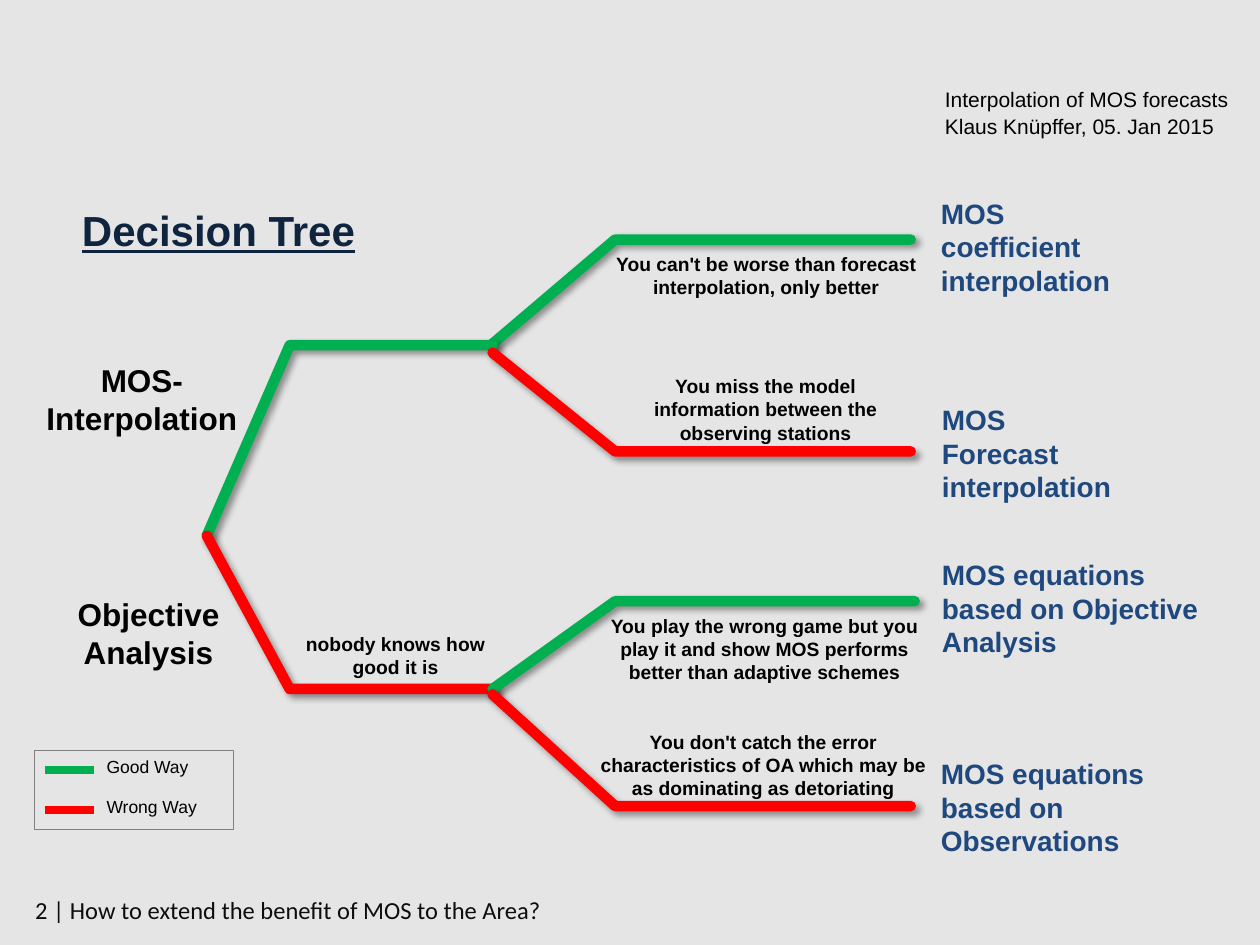
import pptx
import pptx.dml.color
import pptx.enum.shapes
import pptx.enum.text
import pptx.oxml
import pptx.oxml.ns
import pptx.util

Cm, Pt = pptx.util.Cm, pptx.util.Pt
RGBColor = pptx.dml.color.RGBColor
ALIGN = pptx.enum.text.PP_ALIGN
ANCHOR = pptx.enum.text.MSO_ANCHOR

BACKGROUND = RGBColor(0xE5, 0xE5, 0xE5)
BLACK = RGBColor(0, 0, 0)
NAVY = RGBColor(0x0F, 0x24, 0x3E)
BLUE = RGBColor(0x1F, 0x48, 0x7E)
FOOTER_GREY = RGBColor(0x0D, 0x0D, 0x0D)
FRAME_GREY = RGBColor(0x80, 0x80, 0x80)
GOOD = RGBColor(0x00, 0xB0, 0x50)
WRONG = RGBColor(0xFF, 0, 0)

SHADOW = (
    f'<a:outerShdw {pptx.oxml.ns.nsdecls("a")} blurRad="{Pt(4)}" dist="{Pt(3)}" '
    'dir="2700000" algn="tl" rotWithShape="0">'
    '<a:srgbClr val="000000"><a:alpha val="40000"/></a:srgbClr></a:outerShdw>'
)


def write(s, text, color, align=ALIGN.LEFT, **font):
    p = s.text_frame.paragraphs[0]
    p.text = text
    p.alignment = align
    for name, value in {"name": "Arial", **font}.items():
        setattr(p.font, name, value)
    p.font.color.rgb = color
    return p


def add_text(box, text, color, align=ALIGN.LEFT, left_inset=None, **font):
    """Add a text box; a given left inset zeroes the others and centres the text vertically."""
    s = slide.shapes.add_textbox(*map(Cm, box))
    tf = s.text_frame
    tf.word_wrap = True
    if left_inset is not None:
        tf.margin_left = Cm(left_inset)
        tf.margin_right = tf.margin_top = tf.margin_bottom = 0
        tf.vertical_anchor = ANCHOR.MIDDLE
    return write(s, text, color, align, **font)


prs = pptx.Presentation()
prs.slide_width, prs.slide_height = Cm(25.4), Cm(19.05)
slide = prs.slides.add_slide(prs.slide_layouts[5])
slide.background.fill.solid()
slide.background.fill.fore_color.rgb = BACKGROUND

title = slide.shapes.title
title.left, title.top, title.width, title.height = Cm(0.71), Cm(3.94), Cm(7.39), Cm(1.4)
title.text_frame.vertical_anchor = ANCHOR.MIDDLE
write(title, "Decision Tree", NAVY, ALIGN.CENTER, size=Pt(24), bold=True, underline=True)

p = add_text((18.8, 1.57, 6.5, 1.57),
             "Interpolation of MOS forecasts\nKlaus Knüpffer, 05. Jan 2015",
             BLACK, size=Pt(12))
p.line_spacing = 1.08

# Each branch runs from its start over a knee to a level end
ROOT, KNEE_1, FORK, KNEE_2, LEAF = 4.17, 5.84, 9.93, 12.4, 18.36
branches = [
    (GOOD, (FORK, 6.93), (KNEE_2, 4.83), LEAF),
    (GOOD, (ROOT, 10.8), (KNEE_1, 6.96), FORK),
    (WRONG, (FORK, 7.11), (KNEE_2, 9.1), LEAF),
    (WRONG, (ROOT, 10.8), (KNEE_1, 13.89), FORK),
    (GOOD, (FORK, 13.89), (KNEE_2, 12.12), LEAF + 0.08),
    (WRONG, (FORK, 14), (KNEE_2, 16.25), LEAF),
]
for color, start, knee, end_x in branches:
    builder = slide.shapes.build_freeform(Cm(start[0]), Cm(start[1]))
    builder.add_line_segments(
        [(Cm(x), Cm(y)) for x, y in (knee, (end_x, knee[1]))], close=False)
    s = builder.convert_to_shape()
    s.fill.background()
    s.line.color.rgb = color
    s.line.width = Pt(6)
    ln = s.line._get_or_add_ln()
    ln.set("cap", "rnd")
    ln.append(pptx.oxml.parse_xml(f'<a:round {pptx.oxml.ns.nsdecls("a")}/>'))
    s.shadow.inherit = False
    effects = s._element.spPr.find(pptx.oxml.ns.qn("a:effectLst"))
    effects.append(pptx.oxml.parse_xml(SHADOW))

choices = [
    ((0.89, 7.32, 3.94, 1.45), "MOS-Interpolation"),
    ((1.52, 12.04, 2.95, 1.45), "Objective Analysis"),
]
reasons = [
    ((12.4, 5.08, 6.1, 0.94), "You can't be worse than forecast interpolation, only better"),
    ((12.55, 7.54, 5.77, 1.42), "You miss the model information between the observing stations"),
    ((6.12, 12.75, 3.71, 0.94), "nobody knows how good it is"),
    ((12.29, 12.37, 6.25, 1.42),
     "You play the wrong game but you play it and show MOS performs better than "
     "adaptive schemes"),
    ((12.09, 14.71, 6.6, 1.42),
     "You don't catch the error characteristics of OA which may be as dominating as "
     "detoriating"),
]
outcomes = [
    ((18.72, 4.32, 3.8, 1.3), "MOS coefficient interpolation"),
    ((18.74, 8.48, 3.8, 1.3), "MOS Forecast interpolation"),
    ((18.74, 11.61, 5.87, 1.3), "MOS equations based on Objective Analysis"),
    ((18.72, 15.62, 5.87, 1.3), "MOS equations based on Observations"),
]
for labels, color, align, inset, size in (
    (choices, BLACK, ALIGN.CENTER, 0, 18),
    (reasons, BLACK, ALIGN.CENTER, 0, 11),
    (outcomes, BLUE, ALIGN.LEFT, 0.25, 16),
):
    for box, text in labels:
        add_text(box, text, color, align, inset, size=Pt(size), bold=True)

frame = slide.shapes.add_shape(pptx.enum.shapes.MSO_SHAPE.RECTANGLE,
                               Cm(0.7), Cm(15.12), Cm(4), Cm(1.6))
frame.shadow.inherit = False
frame.fill.background()
frame.line.color.rgb = FRAME_GREY
frame.line.width = Pt(0.25)

for i, (text, color) in enumerate([("Good Way", GOOD), ("Wrong Way", WRONG)]):
    y = 15.52 + 0.81 * i
    key = slide.shapes.add_connector(pptx.enum.shapes.MSO_CONNECTOR.STRAIGHT,
                                     Cm(0.9), Cm(y), Cm(1.9), Cm(y))
    key.line.color.rgb = color
    key.line.width = Pt(4.5)
    key._element.spPr.append(
        pptx.oxml.parse_xml(f'<a:effectLst {pptx.oxml.ns.nsdecls("a")}/>'))
    add_text((1.9, y - 0.4, 2.6, 0.68), text, BLACK, size=Pt(10))

add_text((0.46, 17.91, 11.5, 0.86), "2 | How to extend the benefit of MOS to the Area?",
         FOOTER_GREY, name="Calibri", size=Pt(14))

prs.save("out.pptx")
